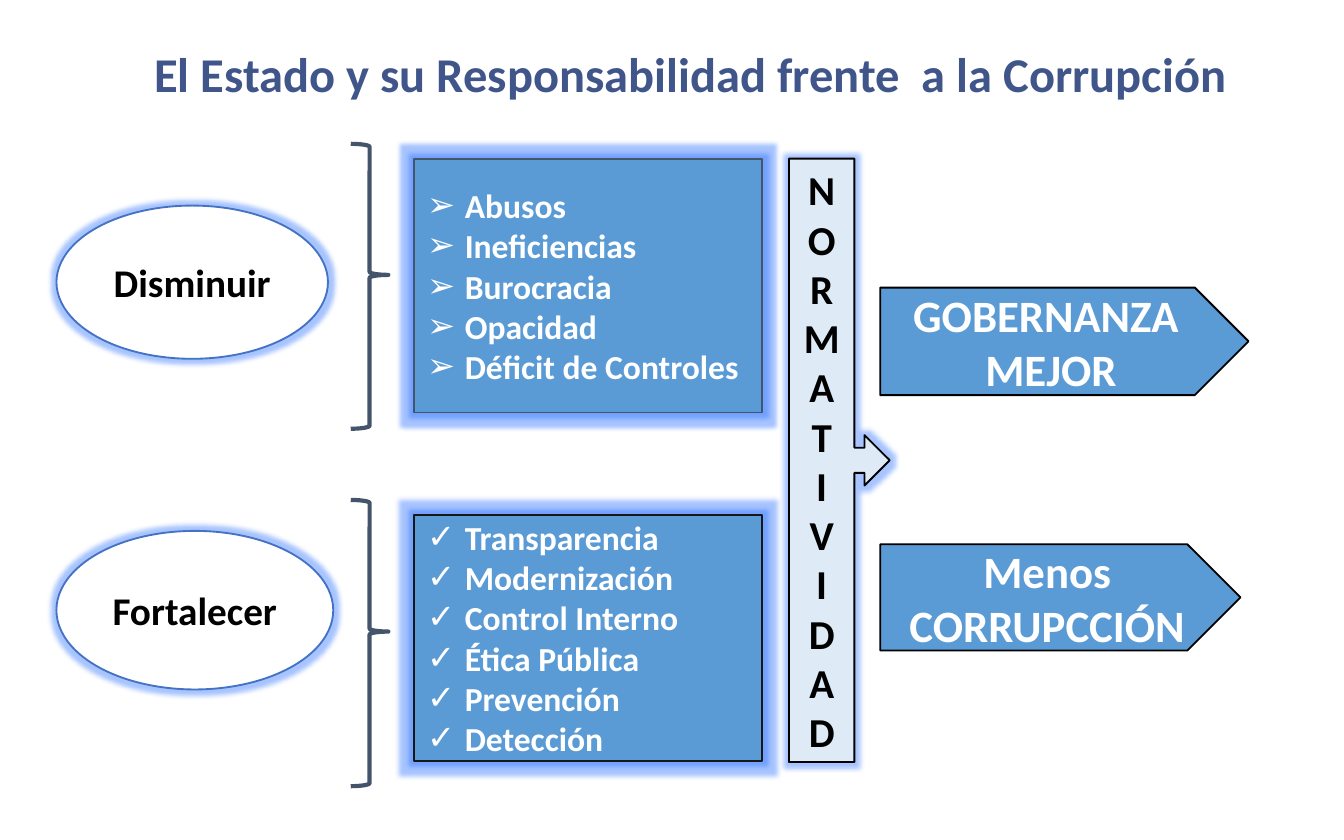
from lxml.etree import SubElement
from pptx import Presentation
from pptx.dml.color import RGBColor
from pptx.enum.shapes import MSO_SHAPE
from pptx.enum.text import MSO_ANCHOR, PP_ALIGN
from pptx.oxml.ns import qn
from pptx.util import Pt

PX = 9144
FONT = "Calibri"
WHITE = RGBColor(0xFF, 0xFF, 0xFF)
BLACK = RGBColor(0x00, 0x00, 0x00)
INK = RGBColor(0x18, 0x17, 0x17)
TITLE_BLUE = RGBColor(0x40, 0x55, 0x8A)
OUTLINE_BLUE = RGBColor(0x44, 0x72, 0xC4)
SLATE = RGBColor(0x44, 0x54, 0x6A)
PANEL_BLUE = RGBColor(0x5B, 0x9B, 0xD5)
PALE_BLUE = RGBColor(0xDE, 0xEB, 0xF7)
GLOW_BLUE = RGBColor(0x24, 0x6C, 0xFF)


def px(*lengths):
    return [length * PX for length in lengths]


def add_figure(page, kind, box, fill, line, line_width=1, glow=0):
    figure = page.shapes.add_shape(kind, *px(*box))
    figure.shadow.inherit = False
    if fill is None:
        figure.fill.background()
    else:
        figure.fill.solid()
        figure.fill.fore_color.rgb = fill
    figure.line.color.rgb = line
    figure.line.width = Pt(line_width)
    if glow:
        effects = figure._element.spPr.find(qn("a:effectLst"))
        halo = SubElement(effects, qn("a:glow"), rad=str(Pt(glow)))
        color = SubElement(halo, qn("a:srgbClr"), val=str(GLOW_BLUE))
        SubElement(color, qn("a:alpha"), val="40000")
    return figure


def write_lines(shape, lines, size, color, bullet=None):
    frame = shape.text_frame
    frame.word_wrap = True
    frame.vertical_anchor = MSO_ANCHOR.MIDDLE
    for index, line in enumerate(lines):
        para = frame.add_paragraph() if index else frame.paragraphs[0]
        para.text = line
        para.alignment = PP_ALIGN.LEFT if bullet else PP_ALIGN.CENTER
        if bullet:
            properties = para._p.get_or_add_pPr()
            properties.set("marL", str(28 * PX))
            properties.set("indent", str(-28 * PX))
            SubElement(properties, qn("a:buFont"), typeface=FONT)
            SubElement(properties, qn("a:buChar"), char=bullet)
        para.font.name = FONT
        para.font.size = Pt(size)
        para.font.bold = True
        para.font.color.rgb = color


def add_title(page, box, text):
    title = page.shapes.title
    title.left, title.top, title.width, title.height = px(*box)
    write_lines(title, [text], 26, TITLE_BLUE)


def add_action(page, box, label, oval_box, panel_height, panel_line, items, bullet):
    left, top, width, height = box
    oval_top, oval_width, oval_height = oval_box
    oval = add_figure(page, MSO_SHAPE.OVAL, (left, top + oval_top, oval_width, oval_height),
                      WHITE, OUTLINE_BLUE, glow=5)
    write_lines(oval, [label], 21, BLACK)
    brace = add_figure(page, MSO_SHAPE.RIGHT_BRACE, (left + 219, top, 28, height),
                       None, SLATE, 2.25)
    brace.adjustments[0] = 0.08
    brace.adjustments[1] = 0.46
    panel = add_figure(page, MSO_SHAPE.RECTANGLE,
                       (left + width - 259, top + 11, 259, panel_height),
                       PANEL_BLUE, panel_line, glow=5)
    write_lines(panel, items, 18, WHITE, bullet)


def add_regulation(page, box, word):
    callout = add_figure(page, MSO_SHAPE.RIGHT_ARROW_CALLOUT, box, PALE_BLUE, BLACK, glow=5)
    write_lines(callout, word, 22, BLACK)


def add_result(page, box, lines):
    pentagon = add_figure(page, MSO_SHAPE.PENTAGON, box, PANEL_BLUE, BLACK)
    write_lines(pentagon, lines, 24, WHITE)


def main():
    deck = Presentation()
    deck.slide_width, deck.slide_height = px(1000, 625)
    page = deck.slides.add_slide(deck.slide_layouts[5])
    add_title(page, (48, 27, 933, 54),
              "El Estado y su Responsabilidad frente  a la Corrupción")
    add_action(page, (42, 107, 525, 212), "Disminuir ", (46, 202, 114), 189, SLATE,
               ["Abusos", "Ineficiencias", "Burocracia", "Opacidad", "Déficit de Controles"],
               "➢")
    add_action(page, (42, 372, 525, 213), "Fortalecer ", (23, 206, 118), 183, INK,
               ["Transparencia", "Modernización", "Control Interno", "Ética Pública",
                "Prevención", "Detección"],
               "✓")
    add_regulation(page, (587, 118, 75, 449), "NORMATIVIDAD")
    add_result(page, (655, 214, 274, 80), ["GOBERNANZA ", "MEJOR"])
    add_result(page, (655, 405, 268, 79), ["Menos", "CORRUPCCIÓN"])
    deck.save("out.pptx")


if __name__ == "__main__":
    main()
